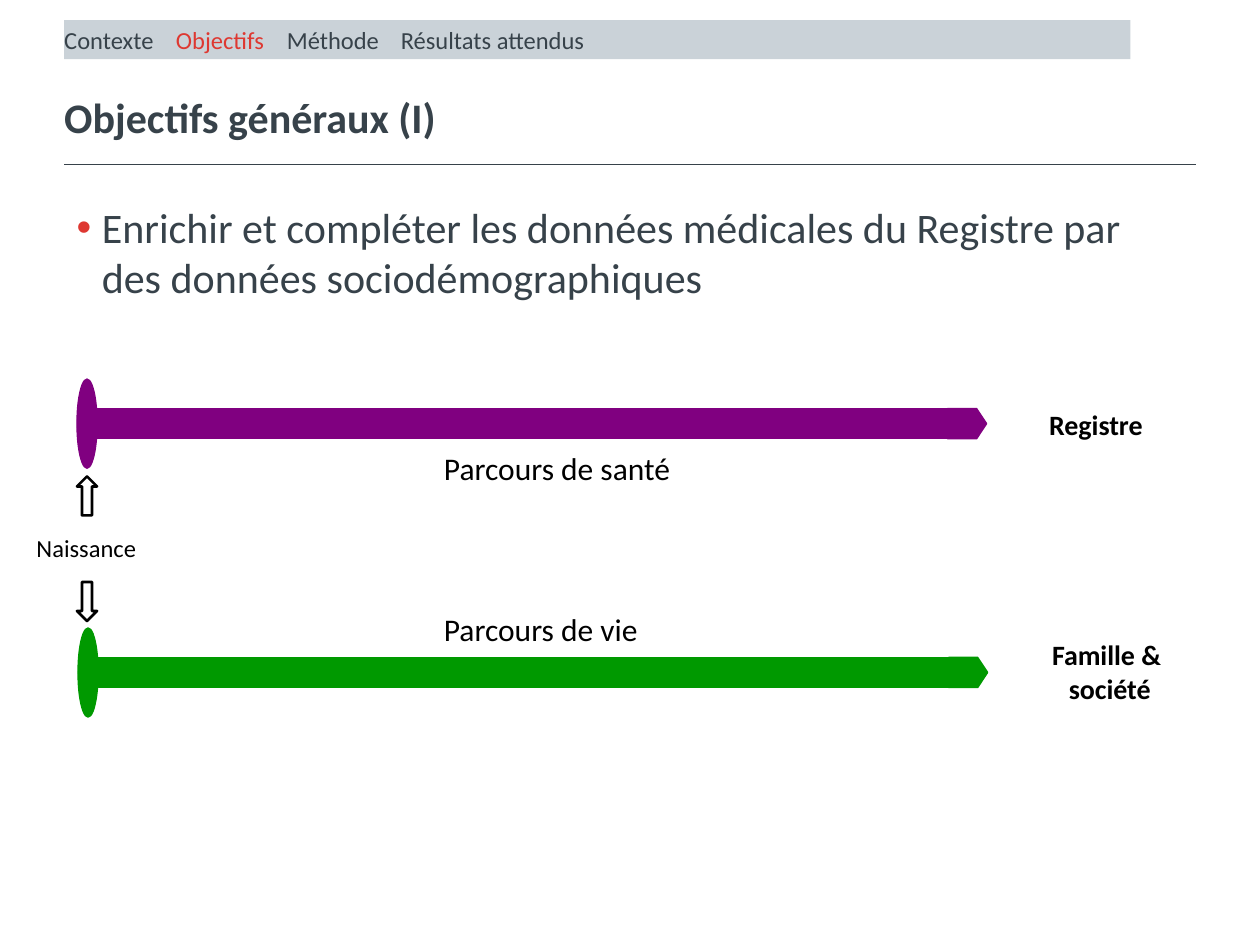
from dataclasses import dataclass

from lxml import etree
from pptx import Presentation
from pptx import util as u
from pptx.dml import color as dml
from pptx.enum import shapes, text
from pptx.oxml import ns

COLORS = {
    "slate": "37424A",
    "red": "DE3831",
    "band": "CAD2D8",
    "purple": "800080",
    "green": "009900",
    "black": "000000",
}
FONT = "Calibri"
LEFT = 36.7
CENTER = text.PP_ALIGN.CENTER
MIDDLE = text.MSO_ANCHOR.MIDDLE


@dataclass
class Span:
    words: str
    size: float
    color: str = "black"
    bold: bool = False


@dataclass
class Label:
    left: float
    top: float
    width: float
    height: float
    lines: list[Span]
    align: text.PP_ALIGN = text.PP_ALIGN.LEFT


@dataclass
class Track:
    left: float
    top: float
    color: str


def rgb(name: str) -> dml.RGBColor:
    return dml.RGBColor.from_string(COLORS[name])


def add_spans(para, spans: list[Span]) -> None:
    for item in spans:
        span = para.add_run()
        span.text = item.words
        span.font.name = FONT
        span.font.size = u.Pt(item.size)
        span.font.bold = item.bold
        span.font.color.rgb = rgb(item.color)


def add_element(parent, tag: str, **attributes: str):
    return etree.SubElement(parent, ns.qn(tag), attributes)


def add_box(slide, left: float, top: float, width: float, height: float, wrap: bool = True):
    box = slide.shapes.add_textbox(u.Pt(left), u.Pt(top), u.Pt(width), u.Pt(height))
    box.text_frame.word_wrap = wrap
    return box


def add_shape(slide, kind, left: float, top: float, width: float, height: float,
              fill: str | None = None, line: str | None = None, weight: float = 0.75):
    shape = slide.shapes.add_shape(kind, u.Pt(left), u.Pt(top), u.Pt(width), u.Pt(height))
    shape.shadow.inherit = False
    if fill:
        shape.fill.solid()
        shape.fill.fore_color.rgb = rgb(fill)
    else:
        shape.fill.background()
    if line:
        shape.line.color.rgb = rgb(line)
        shape.line.width = u.Pt(weight)
    else:
        shape.line.fill.background()
    return shape


def add_label(slide, label: Label) -> None:
    box = add_box(slide, label.left, label.top, label.width, label.height, wrap=False)
    frame = box.text_frame
    for index, line in enumerate(label.lines):
        para = frame.add_paragraph() if index else frame.paragraphs[0]
        para.alignment = label.align
        add_spans(para, [line])


def add_track(slide, track: Track) -> None:
    """Birth marker, long bar and pointed end of one timeline."""
    kinds = shapes.MSO_SHAPE
    marker, bar, tip = 11.5, 486, 22.3
    thickness, marker_height = 17.3, 51
    bar_top = track.top + (marker_height - thickness) / 2
    style = {"fill": track.color, "line": track.color}
    add_shape(slide, kinds.OVAL, track.left, track.top, marker, marker_height, **style)
    add_shape(slide, kinds.RECTANGLE, track.left + marker, bar_top, bar, thickness, **style)
    end = add_shape(slide, kinds.PENTAGON, track.left + marker + bar, bar_top,
                    tip, thickness, **style)
    end.adjustments[0] = 0.33


def add_navigation(slide) -> None:
    band = add_shape(slide, shapes.MSO_SHAPE.RECTANGLE, LEFT, 11.5, 609.3, 22.3, fill="band")
    frame = band.text_frame
    frame.word_wrap = True
    frame.margin_left = 0
    frame.vertical_anchor = MIDDLE
    para = frame.paragraphs[0]
    para.alignment = text.PP_ALIGN.LEFT
    tabs = add_element(para._p.get_or_add_pPr(), "a:tabLst")
    for stop in (63.8, 127.2, 192.3):
        add_element(tabs, "a:tab", pos=str(u.Pt(stop)), algn="l")
    add_spans(para, [
        Span("Contexte\t", 14, "slate"),
        Span("Objectifs", 14, "red"),
        Span("\tMéthode\tRésultats attendus", 14, "slate"),
    ])


def add_heading(slide) -> None:
    rule = slide.shapes.add_connector(
        shapes.MSO_CONNECTOR.STRAIGHT, u.Pt(LEFT), u.Pt(94), u.Pt(683.3), u.Pt(94))
    rule.line.color.rgb = rgb("slate")
    rule.line.width = u.Pt(0.5)
    add_element(rule._element.spPr, "a:effectLst")

    frame = add_box(slide, LEFT, 45.4, 609.8, 42.5).text_frame
    frame.margin_left = 0
    frame.vertical_anchor = MIDDLE
    add_spans(frame.paragraphs[0], [Span("Objectifs généraux (I)", 24, "slate", True)])


def add_objective(slide) -> None:
    para = add_box(slide, LEFT, 111.6, 646.6, 65.5).text_frame.paragraphs[0]
    properties = para._p.get_or_add_pPr()
    properties.set("marL", str(u.Pt(14.4)))
    properties.set("indent", str(u.Pt(-14.4)))
    bullet_color = add_element(properties, "a:buClr")
    add_element(bullet_color, "a:srgbClr", val=COLORS["red"])
    add_element(properties, "a:buFont", typeface="Arial")
    add_element(properties, "a:buChar", char="•")
    add_spans(para, [Span("Enrichir et compléter les données médicales du Registre par "
                          "des données sociodémographiques", 24, "slate")])


TRACKS = [Track(44, 216.6, "purple"), Track(44.6, 358.8, "green")]

LABELS = [
    Label(13.7, 301, 71.3, 24, [Span("Naissance", 14)], CENTER),
    Label(592.4, 229.2, 68.4, 26.6, [Span("Registre", 16, bold=True)]),
    Label(246.6, 253, 145.4, 28.8, [Span("Parcours de santé", 18)]),
    Label(246.6, 344.9, 126.7, 28.8, [Span("Parcours de vie", 18)]),
    Label(592.4, 360.9, 83.5, 46,
          [Span("Famille & ", 16, bold=True), Span("société", 16, bold=True)], CENTER),
]


def main() -> None:
    deck = Presentation()
    deck.slide_width, deck.slide_height = u.Pt(720), u.Pt(540)
    slide = deck.slides.add_slide(deck.slide_layouts[6])

    # Title and main objective
    add_heading(slide)
    add_objective(slide)

    # Timelines
    for track in TRACKS:
        add_track(slide, track)

    # Arrows from birth to both timelines
    for kind, top in ((shapes.MSO_SHAPE.UP_ARROW, 272.2), (shapes.MSO_SHAPE.DOWN_ARROW, 332.6)):
        add_shape(slide, kind, 44, top, 11.5, 22.3, line="black", weight=1.5)

    for label in LABELS:
        add_label(slide, label)

    # Section navigation
    add_navigation(slide)

    deck.save("out.pptx")


if __name__ == "__main__":
    main()
